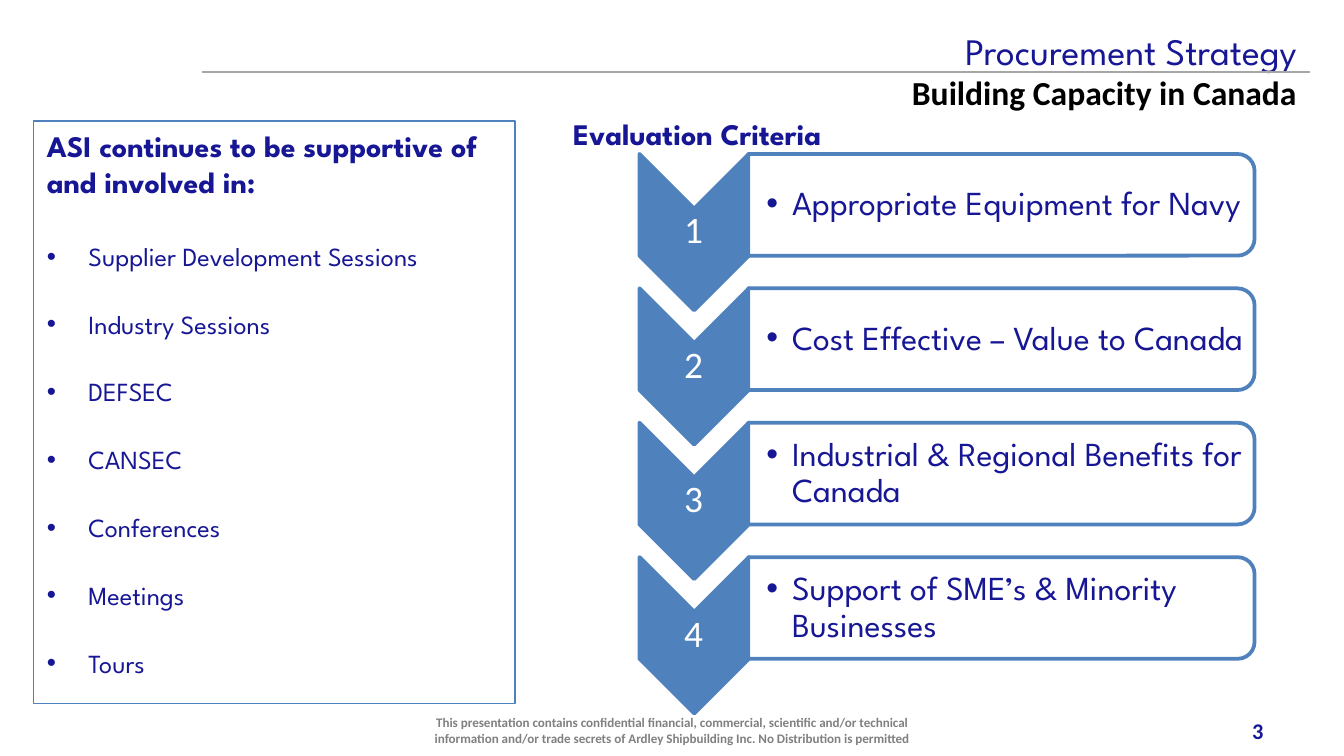
from dataclasses import dataclass
from lxml.etree import SubElement
from pptx import Presentation
from pptx.dml.color import RGBColor
from pptx.enum.shapes import MSO_CONNECTOR, MSO_SHAPE
from pptx.enum.text import MSO_ANCHOR, MSO_AUTO_SIZE, PP_ALIGN
from pptx.oxml.ns import qn
from pptx.util import Inches, Pt


@dataclass(frozen=True)
class Theme:
    """Colours, fonts and type sizes."""
    navy: str = "171796"
    blue: str = "4F81BD"
    white: str = "FFFFFF"
    black: str = "000000"
    gray: str = "808080"
    rule: str = "A6A6A6"
    head: str = "League Spartan"
    body: str = "Calibri"
    large: int = 20
    mid: int = 18
    lead: int = 16
    item: int = 14
    page: int = 12
    note: int = 7


def cells(*counts):
    """Turn grid cells, 120 across the slide, into lengths."""
    return [Inches(count / 12) for count in counts]


def put(target, values):
    """Set each named value on the target."""
    for name, value in values.items():
        setattr(target, name, value)


class Deck:
    """Holds the style and the current slide."""

    def __init__(self, theme):
        """Start a deck with one title-only slide."""
        self.theme = theme
        self.show = Presentation()
        put(self.show, dict(zip(("slide_width", "slide_height"), cells(120, 67.5))))
        self.slide = self.show.slides.add_slide(self.show.slide_layouts[5])

    def frame(self, shape, inset=None, anchor=MSO_ANCHOR.TOP):
        """Prepare the text frame of a shape."""
        frame = shape.text_frame
        put(frame, dict(word_wrap=True, auto_size=MSO_AUTO_SIZE.NONE,
                        vertical_anchor=anchor))
        if inset:
            sides = ("margin_left", "margin_top", "margin_right", "margin_bottom")
            put(frame, dict(zip(sides, map(Inches, inset))))
        return frame

    def fill(self, para, text, size, color, face, bold=False, indent=0, **form):
        """Fill a paragraph, with a bullet if it is indented."""
        put(para, form)
        if indent:
            props = para._p.get_or_add_pPr()
            props.set("marL", str(Inches(indent)))
            props.set("indent", str(-Inches(indent)))
            SubElement(props, qn("a:buFont"), typeface="Arial")
            SubElement(props, qn("a:buChar"), char="•")
        run = para.add_run()
        run.text = text
        put(run.font, dict(size=Pt(size), name=face, bold=bold))
        run.font.color.rgb = RGBColor.from_string(color)

    def title(self, place, text):
        """Move and fill the title."""
        shape = self.slide.shapes.title
        put(shape, dict(zip(("left", "top", "width", "height"), cells(*place))))
        para = self.frame(shape).paragraphs[0]
        self.fill(para, text, self.theme.large, self.theme.navy,
                  self.theme.head, alignment=PP_ALIGN.RIGHT)

    def label(self, place, text, size, color, face, inset=None,
              anchor=MSO_ANCHOR.TOP, **form):
        """Add a text box with one paragraph."""
        shape = self.slide.shapes.add_textbox(*cells(*place))
        para = self.frame(shape, inset, anchor).paragraphs[0]
        self.fill(para, text, size, color, face, **form)

    def block(self, kind, place, fill=None, weight=2, turn=0, alpha=None):
        """Add an outlined shape."""
        shape = self.slide.shapes.add_shape(kind, *cells(*place))
        shape.shadow.inherit = False
        shape.rotation = turn
        shape.line.color.rgb = RGBColor.from_string(self.theme.blue)
        shape.line.width = Pt(weight)
        if fill:
            shape.fill.solid()
            shape.fill.fore_color.rgb = RGBColor.from_string(fill)
        else:
            shape.fill.background()
        if alpha:
            tint = shape._element.spPr.find(qn("a:solidFill"))[0]
            SubElement(tint, qn("a:alpha"), val=str(alpha * 1000))
        return shape

    def rule(self, *ends):
        """Add a thin line."""
        line = self.slide.shapes.add_connector(MSO_CONNECTOR.STRAIGHT, *cells(*ends))
        line.line.color.rgb = RGBColor.from_string(self.theme.rule)
        line.line.width = Pt(1)
        SubElement(line._element.spPr, qn("a:effectLst"))

    def panel(self, place, lead, items):
        """Add a framed list under a bold lead."""
        look = self.theme
        frame = self.frame(self.block(MSO_SHAPE.RECTANGLE, place, weight=0.75))
        self.fill(frame.paragraphs[0], lead, look.lead, look.navy, look.head,
                  bold=True, alignment=PP_ALIGN.LEFT)
        for rank, text in enumerate(items):
            self.fill(frame.add_paragraph(), text, look.item, look.navy, look.head,
                      indent=0.31, alignment=PP_ALIGN.LEFT,
                      space_before=Pt(19.5 if rank else 22))

    def step(self, rank, text):
        """Add one numbered chevron with its bar."""
        look, top = self.theme, 12 * rank
        middle = MSO_ANCHOR.MIDDLE
        self.block(MSO_SHAPE.CHEVRON, (55, top + 3.84, 13.96, 9.77), look.blue, turn=90)
        self.label((57.05, top + 6.6, 9.77, 4.2), str(rank), look.large, look.white,
                   look.body, inset=(0.01,) * 4, anchor=middle,
                   alignment=PP_ALIGN.CENTER, line_spacing=0.9)
        self.block(MSO_SHAPE.ROUND_2_SAME_RECTANGLE, (84.86, top - 16.32, 9.08, 45.23),
                   look.white, turn=90, alpha=90)
        self.label((66.75, top + 2.2, 44.8, 8.16), text, look.mid, look.navy,
                   look.head, inset=(0.14, 0.01, 0.01, 0.01), anchor=middle,
                   indent=0.19, line_spacing=0.9)


def main():
    """Build and save the slide."""
    look = Theme()
    deck = Deck(look)
    right, middle = PP_ALIGN.RIGHT, MSO_ANCHOR.MIDDLE
    deck.rule(18, 6.4, 117, 6.4)
    deck.title((11, 1.9, 106, 11), "Procurement Strategy")
    deck.label((45, 5.8, 72, 6), "Building Capacity in Canada", look.mid, look.black,
               look.body, bold=True, alignment=right)
    deck.label((86, 63.4, 28, 3.6), "3", look.page, look.navy, look.body,
               anchor=middle, bold=True, alignment=right)
    deck.panel((3, 10.8, 43, 52), "ASI continues to be supportive of and involved in:",
               ("Supplier Development Sessions", "Industry Sessions", "DEFSEC",
                "CANSEC", "Conferences", "Meetings", "Tours"))
    deck.label((50, 9.7, 63, 54), "Evaluation Criteria", look.lead, look.navy,
               look.head, bold=True)
    steps = ("Appropriate Equipment for Navy", "Cost Effective – Value to Canada",
             "Industrial & Regional Benefits for Canada",
             "Support of SME’s & Minority Businesses")
    for rank, text in enumerate(steps, 1):
        deck.step(rank, text)
    deck.label((35.5, 63.4, 49, 3.6),
               "This presentation contains confidential financial, commercial, "
               "scientific and/or technical information and/or trade secrets of "
               "Ardley Shipbuilding Inc. No Distribution is permitted",
               look.note, look.gray, look.body, anchor=middle, bold=True,
               alignment=PP_ALIGN.CENTER)
    deck.show.save("out.pptx")


if __name__ == "__main__":
    main()
